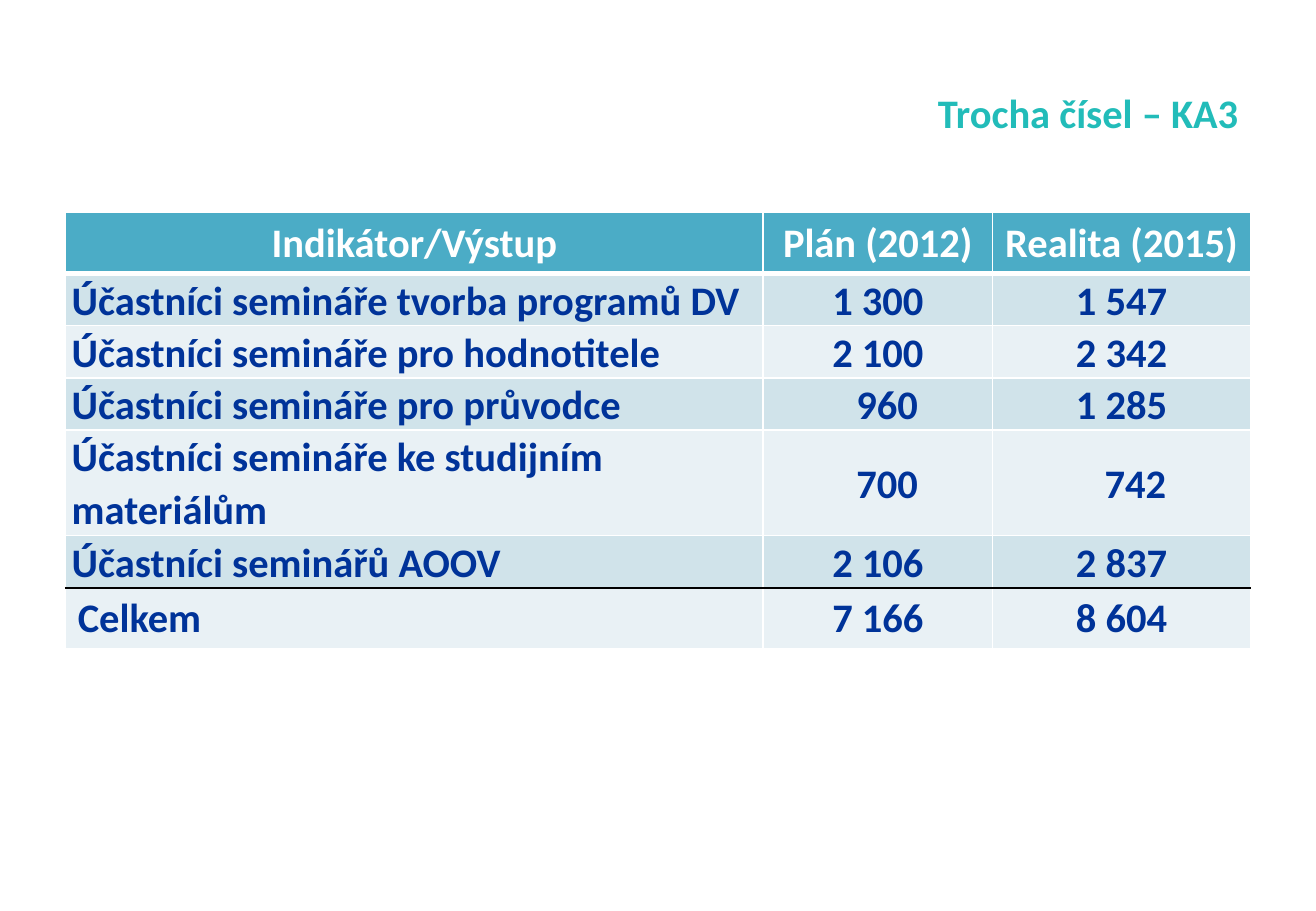
import pptx
import pptx.dml.color
import pptx.enum.text
import pptx.oxml
import pptx.oxml.ns
import pptx.util

Inches, Pt = pptx.util.Inches, pptx.util.Pt
RGB = pptx.dml.color.RGBColor.from_string
ALIGN = pptx.enum.text.PP_ALIGN
ANCHOR = pptx.enum.text.MSO_ANCHOR

THEME = {
    "font": "Calibri", "size": 24,
    "title": "22BCB9", "header_text": "FFFFFF", "body_text": "003399",
    "header_fill": "4BACC6", "bands": ["E9F1F5", "D0E3EA"],
    "grid": "FFFFFF", "total_line": "000000",
}
ROWS = [
    ("Indikátor/Výstup", "Plán (2012)", "Realita (2015)"),
    ("Účastníci semináře tvorba programů DV", "1 300", "1 547"),
    ("Účastníci semináře pro hodnotitele", "2 100", "2 342"),
    ("Účastníci semináře pro průvodce", "960", "1 285"),
    ("Účastníci semináře ke studijním materiálům", "700", "742"),
    ("Účastníci seminářů AOOV", "2 106", "2 837"),
    ("Celkem", "7 166", "8 604"),
]
COLUMN_WIDTHS = [5.74, 1.89, 2.12]
ROW_HEIGHTS = [0.5, 0.43, 0.43, 0.43, 0.87, 0.43, 0.5]
EXTRA_INDENT = {"960": 0.15, "700": 0.15, "742": 0.23}
TOTAL = len(ROWS) - 1


def style_paragraph(p, text, color, align):
    p.text = text
    p.alignment = align
    p.font.name, p.font.size, p.font.bold = THEME["font"], Pt(THEME["size"]), True
    p.font.color.rgb = RGB(color)


def set_borders(cell, borders):
    """Draw cell edges from (side, colour, points) in the order L, R, T, B."""
    for i, (side, color, width) in enumerate(borders):
        cell._tc.get_or_add_tcPr().insert(i, pptx.oxml.parse_xml(
            f'<a:ln{side} {pptx.oxml.ns.nsdecls("a")} w="{Pt(width)}">'
            f'<a:solidFill><a:srgbClr val="{color}"/></a:solidFill></a:ln{side}>'))


prs = pptx.Presentation()
prs.slide_width, prs.slide_height = Inches(10.83), Inches(7.5)
s = prs.slides.add_slide(prs.slide_layouts[6])

title = s.shapes.add_textbox(Inches(0.54), Inches(0.3), Inches(9.75), Inches(1.25))
tf = title.text_frame
tf.word_wrap = True
tf.vertical_anchor = ANCHOR.MIDDLE
style_paragraph(tf.paragraphs[0], "Trocha čísel – KA3", THEME["title"], ALIGN.RIGHT)

table = s.shapes.add_table(
    len(ROWS), len(COLUMN_WIDTHS), Inches(0.54), Inches(1.75),
    Inches(sum(COLUMN_WIDTHS)), Inches(sum(ROW_HEIGHTS))).table
for column, width in zip(table.columns, COLUMN_WIDTHS):
    column.width = Inches(width)
for row, height in zip(table.rows, ROW_HEIGHTS):
    row.height = Inches(height)

for r, texts in enumerate(ROWS):
    header, total = r == 0, r == TOTAL
    top = (THEME["total_line"], 1) if total else (THEME["grid"], 3 if r == 1 else 1)
    bottom = (THEME["total_line"] if r == TOTAL - 1 else THEME["grid"], 3 if header else 1)
    for c, text in enumerate(texts):
        cell = table.cell(r, c)
        cell.fill.solid()
        cell.fill.fore_color.rgb = RGB(THEME["header_fill"] if header else THEME["bands"][r % 2])
        set_borders(cell, [("L", THEME["grid"], 1), ("R", THEME["grid"], 1),
                           ("T", *top), ("B", *bottom)])
        p = cell.text_frame.paragraphs[0]
        style_paragraph(p, text, THEME["header_text" if header else "body_text"],
                        ALIGN.CENTER if header or c else ALIGN.LEFT)
        if not header and not total:
            p.line_spacing = 1.07
            cell.margin_left = Inches(0.05 + EXTRA_INDENT.get(text, 0))
            cell.margin_right = Inches(0.05)
            cell.margin_top = cell.margin_bottom = 0
            cell.vertical_anchor = ANCHOR.MIDDLE if r == 4 and c else ANCHOR.BOTTOM
        elif total and c:
            cell.vertical_anchor = ANCHOR.MIDDLE

prs.save("out.pptx")
